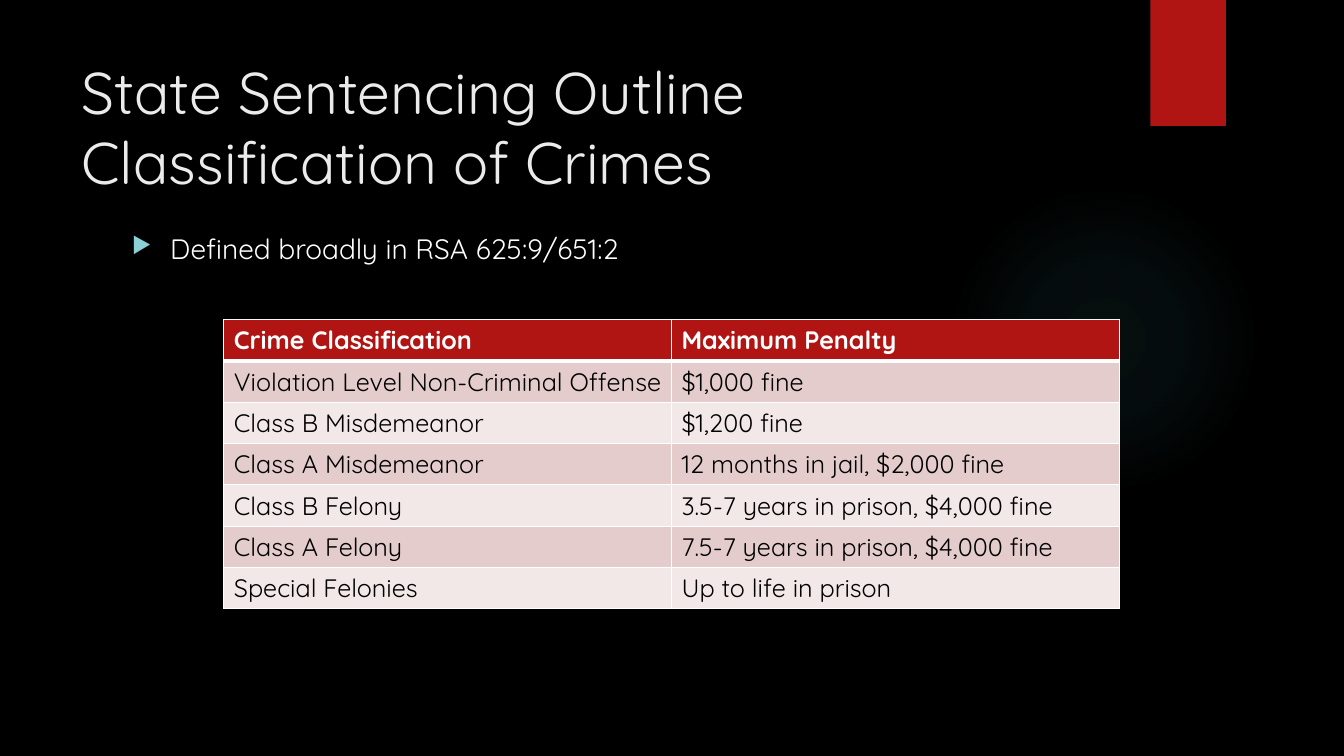
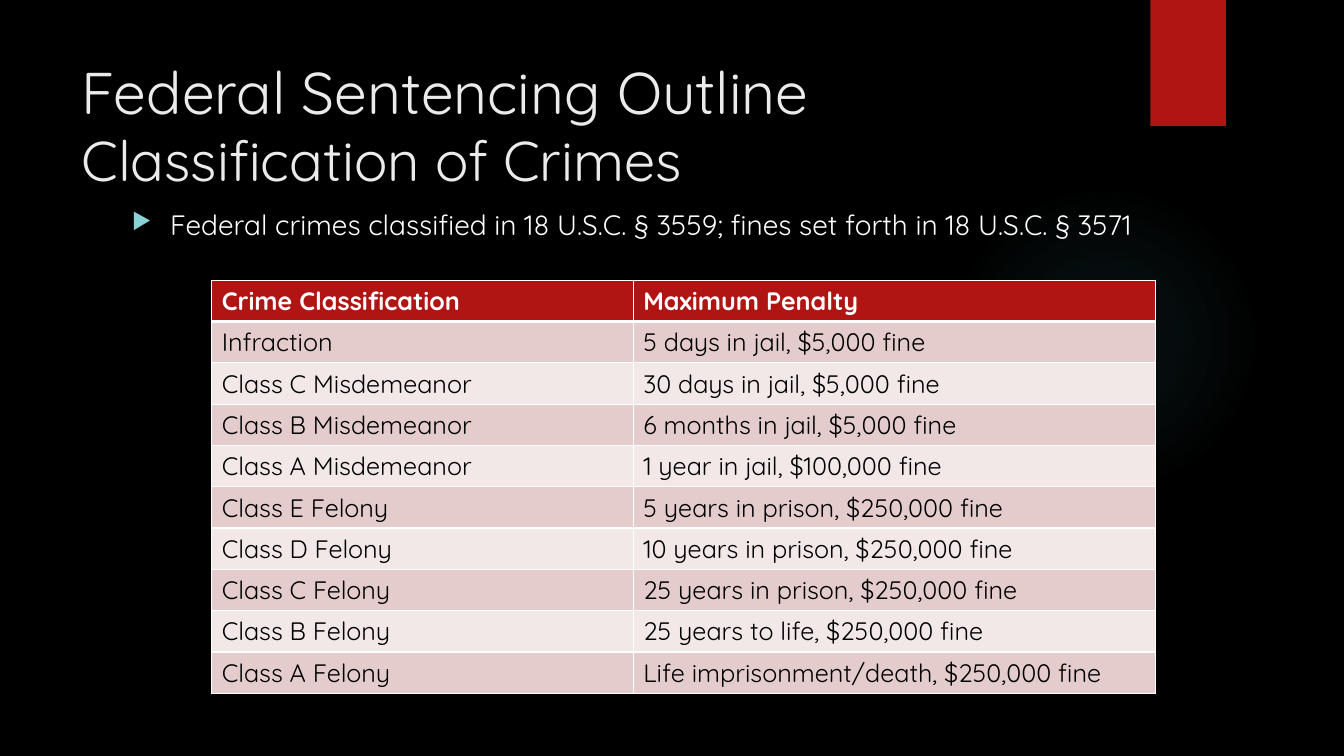
"""Build two slides that outline state and federal crime classifications."""
from lxml.etree import SubElement
from pptx import Presentation
from pptx.dml.color import RGBColor
from pptx.enum.shapes import MSO_SHAPE
from pptx.enum.text import MSO_ANCHOR
from pptx.oxml import parse_xml
from pptx.oxml.ns import nsdecls, qn
from pptx.util import Inches, Pt

FONT = "Quicksand"
BLACK = "000000"
WHITE = "FFFFFF"
RED = "B01513"
TITLE_COLOR = "EBEBEB"
BULLET_COLOR = "8AD0D6"
GLOW_COLOR = "50B9C1"
ROW_COLORS = ("E4CCCC", "F2E8E7")
ROW_HEIGHT = 0.41
GLOW_STOPS = ((0, 7), (36, 6), (69, 0), (100, 0))
HEADINGS = ("Crime Classification", "Maximum Penalty")

STATE_CRIMES = (
    ("Violation Level Non-Criminal Offense", "$1,000 fine"),
    ("Class B Misdemeanor", "$1,200 fine"),
    ("Class A Misdemeanor", "12 months in jail, $2,000 fine"),
    ("Class B Felony", "3.5-7 years in prison, $4,000 fine"),
    ("Class A Felony", "7.5-7 years in prison, $4,000 fine"),
    ("Special Felonies", "Up to life in prison"),
)
FEDERAL_CRIMES = (
    ("Infraction", "5 days in jail, $5,000 fine"),
    ("Class C Misdemeanor", "30 days in jail, $5,000 fine"),
    ("Class B Misdemeanor", "6 months in jail, $5,000 fine"),
    ("Class A Misdemeanor", "1 year in jail, $100,000 fine"),
    ("Class E Felony", "5 years in prison, $250,000 fine"),
    ("Class D Felony", "10 years in prison, $250,000 fine"),
    ("Class C Felony", "25 years in prison, $250,000 fine"),
    ("Class B Felony", "25 years to life, $250,000 fine"),
    ("Class A Felony", "Life imprisonment/death, $250,000 fine"),
)


def rgb(color):
    return RGBColor.from_string(color)


def add_run(paragraph, text, size, color, bold=False):
    run = paragraph.add_run()
    run.text = text
    run.font.name = FONT
    run.font.size = Pt(size)
    run.font.bold = bold
    run.font.color.rgb = rgb(color)


def add_plain_shape(slide, kind, left, top, width, height):
    shape = slide.shapes.add_shape(
        kind, Inches(left), Inches(top), Inches(width), Inches(height))
    shape.shadow.inherit = False
    shape.line.fill.background()
    return shape


def add_glow(slide):
    glow = add_plain_shape(slide, MSO_SHAPE.OVAL, 9.41, 1.83, 3.08, 3.08)
    stops = "".join(
        f'<a:gs pos="{position * 1000}"><a:srgbClr val="{GLOW_COLOR}">'
        f'<a:alpha val="{alpha * 1000}"/></a:srgbClr></a:gs>'
        for position, alpha in GLOW_STOPS)
    gradient = parse_xml(
        f'<a:gradFill {nsdecls("a")} rotWithShape="1"><a:gsLst>{stops}</a:gsLst>'
        '<a:path path="circle"><a:fillToRect l="50000" t="50000" r="50000" b="50000"/>'
        '</a:path></a:gradFill>')
    glow._element.spPr.find(qn("a:prstGeom")).addnext(gradient)


def add_base_slide(presentation):
    slide = presentation.slides.add_slide(presentation.slide_layouts[6])
    slide.background.fill.solid()
    slide.background.fill.fore_color.rgb = rgb(BLACK)
    add_glow(slide)
    band = add_plain_shape(slide, MSO_SHAPE.RECTANGLE, 11.41, 0, 0.75, 1.25)
    band.fill.solid()
    band.fill.fore_color.rgb = rgb(RED)
    return slide


def add_text_box(slide, left, top, width, height):
    box = slide.shapes.add_textbox(
        Inches(left), Inches(top), Inches(width), Inches(height))
    box.text_frame.word_wrap = True
    box.text_frame.vertical_anchor = MSO_ANCHOR.TOP
    return box.text_frame.paragraphs[0]


def add_title(slide, lines, height):
    paragraph = add_text_box(slide, 0.71, 0.5, 10.29, height)
    for index, (text, size) in enumerate(lines):
        if index:
            paragraph.add_line_break()
        add_run(paragraph, text, size, TITLE_COLOR)


def add_bullet(slide, text, top, width, height):
    paragraph = add_text_box(slide, 1.21, top, width, height)
    properties = paragraph._p.get_or_add_pPr()
    properties.set("marL", str(Inches(0.38)))
    properties.set("indent", str(-Inches(0.38)))
    bullet_color = SubElement(properties, qn("a:buClr"))
    SubElement(bullet_color, qn("a:srgbClr"), val=BULLET_COLOR)
    SubElement(properties, qn("a:buSzPct"), val="80000")
    SubElement(properties, qn("a:buChar"), char="▶")
    add_run(paragraph, text, 20, WHITE)


def set_borders(cell, top, bottom):
    properties = cell._tc.get_or_add_tcPr()
    for side, width in (("L", 1), ("R", 1), ("T", top), ("B", bottom)):
        line = SubElement(properties, qn(f"a:ln{side}"), w=str(Pt(width)))
        fill = SubElement(line, qn("a:solidFill"))
        SubElement(fill, qn("a:srgbClr"), val=WHITE)


def add_crime_table(slide, crimes, left, top, column_widths):
    rows = (HEADINGS, *crimes)
    table = slide.shapes.add_table(
        len(rows), len(HEADINGS), Inches(left), Inches(top),
        Inches(sum(column_widths)), Inches(ROW_HEIGHT * len(rows))).table
    for column, width in zip(table.columns, column_widths):
        column.width = Inches(width)
    for row_index, texts in enumerate(rows):
        table.rows[row_index].height = Inches(ROW_HEIGHT)
        is_header = row_index == 0
        fill_color = RED if is_header else ROW_COLORS[(row_index - 1) % 2]
        for column_index, text in enumerate(texts):
            cell = table.cell(row_index, column_index)
            set_borders(cell, 3 if row_index == 1 else 1, 3 if is_header else 1)
            cell.fill.solid()
            cell.fill.fore_color.rgb = rgb(fill_color)
            add_run(cell.text_frame.paragraphs[0], text, 18,
                    WHITE if is_header else BLACK, is_header)


def add_state_slide(presentation):
    slide = add_base_slide(presentation)
    add_title(slide, (("State Sentencing Outline", 42),
                      ("Classification of Crimes", 42)), 1.53)
    add_bullet(slide, "Defined broadly in RSA 625:9/651:2", 2.25, 9.78, 4.59)
    add_crime_table(slide, STATE_CRIMES, 2.22, 3.17, (4.44, 4.44))


def add_federal_slide(presentation):
    slide = add_base_slide(presentation)
    add_title(slide, (("Federal Sentencing Outline", 42),
                      ("Classification of Crimes", 40)), 1.31)
    add_bullet(
        slide,
        "Federal crimes classified in 18 U.S.C. § 3559; fines set forth in 18 U.S.C. § 3571",
        2.01, 11.52, 4.82)
    add_crime_table(slide, FEDERAL_CRIMES, 2.1, 2.78, (4.18, 5.18))


def main():
    presentation = Presentation()
    presentation.slide_width = Inches(13.33)
    presentation.slide_height = Inches(7.5)
    add_state_slide(presentation)
    add_federal_slide(presentation)
    presentation.save("out.pptx")


if __name__ == "__main__":
    main()
